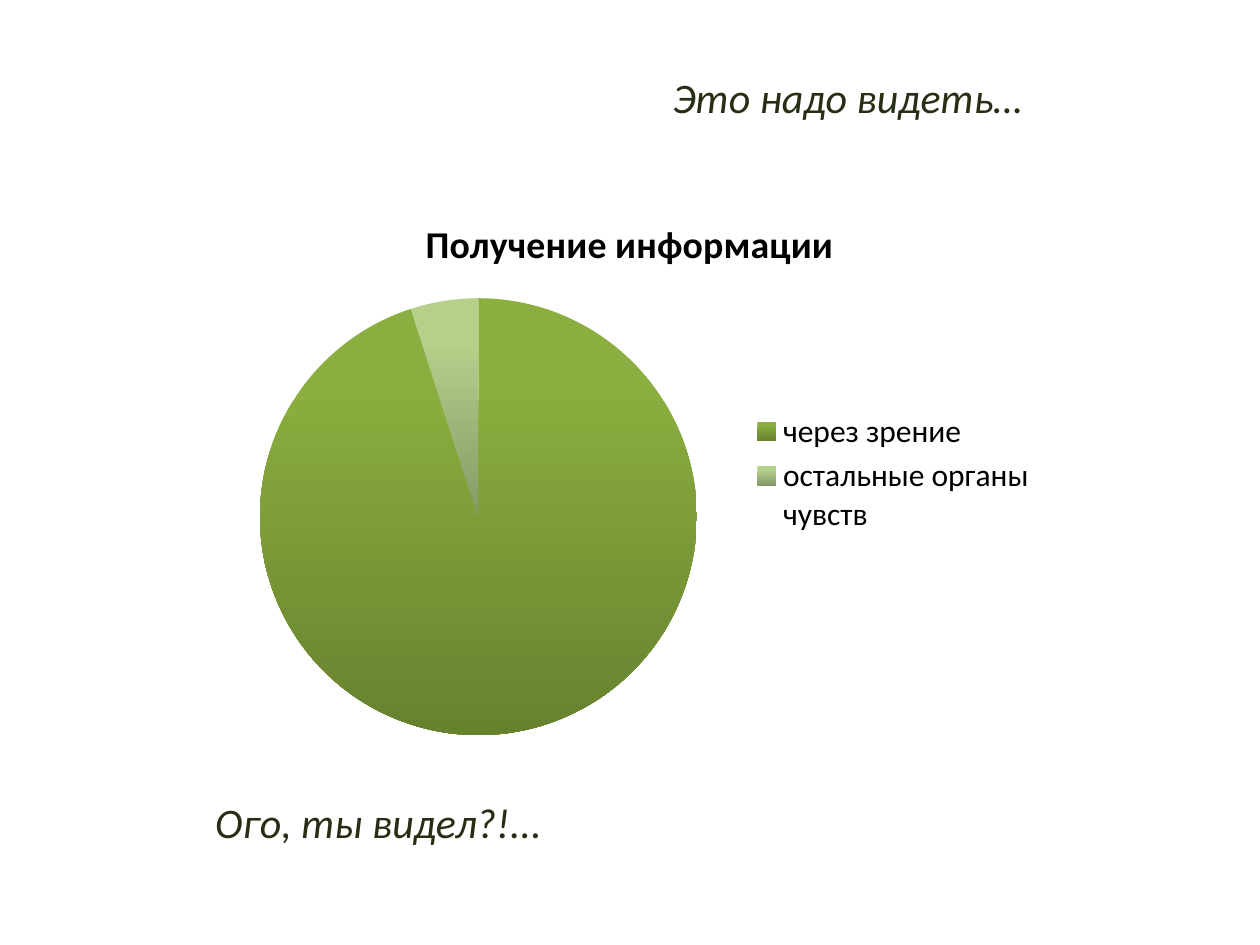
"""Build a slide with a pie chart and two spoken remarks."""
import pptx
import pptx.chart.data
import pptx.dml.color
import pptx.enum.chart
import pptx.util
from pptx.util import Cm, Pt

FACE = "Calibri"
HUES = {
    "quote": "262F13",
    "text": "000000",
    "sight": ("8AAE3F", "67822F"),
    "rest": ("B5D08A", "849A66"),
}


def style(font, size, hue, bold=False, slant=False):
    font.name = FACE
    font.size = Pt(size)
    font.bold = bold
    font.italic = slant
    font.color.rgb = pptx.dml.color.RGBColor.from_string(hue)


def add_quote(slide, text, left, top, width):
    box = slide.shapes.add_textbox(Cm(left), Cm(top), Cm(width), Cm(1.28))
    frame = box.text_frame
    frame.word_wrap = True
    run = frame.paragraphs[0].add_run()
    run.text = text
    style(run.font, 24, HUES["quote"], slant=True)


def shade(point, hues):
    fill = point.format.fill
    fill.gradient()
    fill.gradient_angle = 270
    for stop, hue, place in zip(fill.gradient_stops, hues, (0.2, 1)):
        stop.color.rgb = pptx.dml.color.RGBColor.from_string(hue)
        stop.position = place
    point.format.line.fill.background()


def add_pie(slide, title, parts):
    data = pptx.chart.data.CategoryChartData()
    data.categories = [name for name, value, hues in parts]
    data.add_series(title, [value for name, value, hues in parts])
    chart = slide.shapes.add_chart(
        pptx.enum.chart.XL_CHART_TYPE.PIE,
        Cm(4.23), Cm(3.89), Cm(16.93), Cm(11.28), data,
    ).chart
    style(chart.font, 18, HUES["text"])
    chart.has_title = True
    run = chart.chart_title.text_frame.paragraphs[0].add_run()
    run.text = title
    style(run.font, 21.6, HUES["text"], bold=True)
    chart.chart_title.include_in_layout = False
    chart.has_legend = True
    chart.legend.position = pptx.enum.chart.XL_LEGEND_POSITION.RIGHT
    chart.legend.include_in_layout = False
    plot = chart.plots[0]
    plot.vary_by_categories = True
    for spot, (name, value, hues) in enumerate(parts):
        shade(plot.series[0].points[spot], hues)


def main():
    deck = pptx.Presentation()
    deck.slide_width, deck.slide_height = Cm(25.4), Cm(19.05)
    slide = deck.slides.add_slide(deck.slide_layouts[6])
    add_quote(slide, "Это надо видеть…", 13.31, 1.32, 8)
    add_quote(slide, "Ого, ты видел?!...", 4.09, 15.93, 7.8)
    add_pie(slide, "Получение информации", [
        ("через зрение", 95, HUES["sight"]),
        ("остальные органы чувств", 5, HUES["rest"]),
    ])
    deck.save("out.pptx")


if __name__ == "__main__":
    main()
